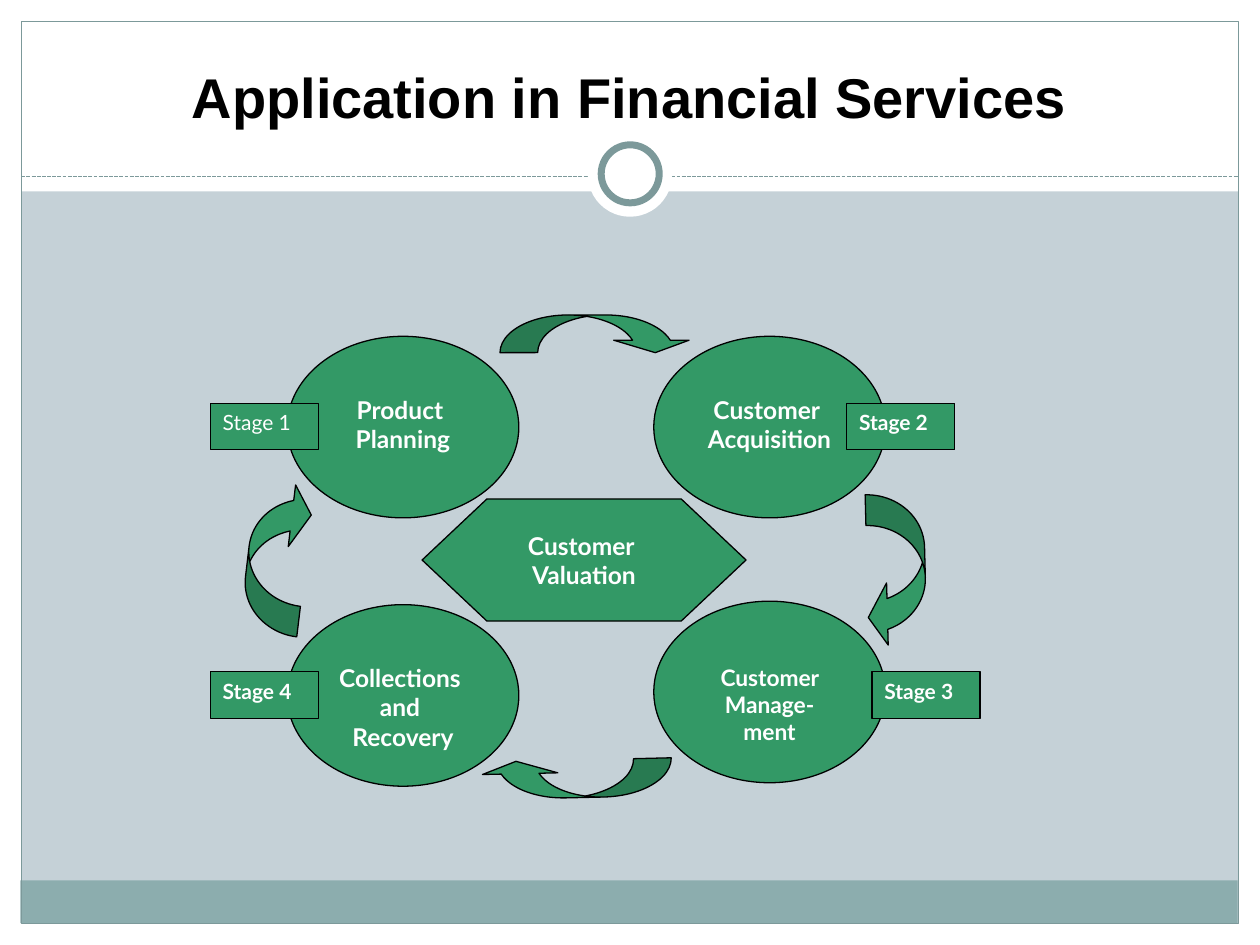
from pptx import Presentation
from pptx import util as u
from pptx.dml import color
from pptx.enum import dml, shapes, text
from pptx.oxml.ns import qn
from lxml import etree

KIND = shapes.MSO_SHAPE
WHITE, BLACK = "FFFFFF", "000000"
BACKDROP, TEAL, BAND, GREEN = "C5D1D7", "7C999A", "8CADAE", "339966"


def rgb(hex_code):
    return color.RGBColor.from_string(hex_code)


class Painter:
    """Holds the style and the current page."""

    body_font = "Lato"
    title_font = "Arial"
    thin = 0.75

    def __init__(self, page):
        self.page = page

    def shape(self, kind, at, fill=None, line=None, width=thin, turn=0, adjust=()):
        box = self.page.shapes.add_shape(kind, *(u.Cm(v) for v in at))
        box.shadow.inherit = False
        box.rotation = turn
        for index, value in enumerate(adjust):
            box.adjustments[index] = value
        if fill:
            box.fill.solid()
            box.fill.fore_color.rgb = rgb(fill)
        else:
            box.fill.background()
        if line:
            box.line.color.rgb = rgb(line)
            box.line.width = u.Pt(width)
        else:
            box.line.fill.background()
        return box

    def node(self, kind, at, **adjustment):
        return self.shape(kind, at, GREEN, BLACK, **adjustment)

    def rule(self, left, right, y):
        line = self.page.shapes.add_connector(
            shapes.MSO_CONNECTOR.STRAIGHT, u.Cm(left), u.Cm(y), u.Cm(right), u.Cm(y))
        line.line.color.rgb = rgb(TEAL)
        line.line.width = u.Pt(self.thin)
        line.line.dash_style = dml.MSO_LINE.SQUARE_DOT
        etree.SubElement(line._element.spPr, qn("a:effectLst"))

    def caption(self, box, lines, size, bold=True, align=text.PP_ALIGN.CENTER,
                top=0.13, font=body_font, ink=WHITE, anchor=text.MSO_ANCHOR.TOP):
        frame = box.text_frame
        frame.word_wrap = True
        frame.vertical_anchor = anchor
        frame.margin_top = u.Cm(top)
        for index, line in enumerate(lines):
            para = frame.add_paragraph() if index else frame.paragraphs[0]
            para.alignment = align
            span = para.add_run()
            span.text = line
            span.font.name = font
            span.font.size = u.Pt(size)
            span.font.bold = bold
            span.font.color.rgb = rgb(ink)

    def title(self, at, words):
        box = self.page.shapes.add_textbox(*(u.Cm(v) for v in at))
        self.caption(box, [words], 32, font=self.title_font, ink=BLACK,
                     anchor=text.MSO_ANCHOR.BOTTOM)


def main():
    deck = Presentation()
    deck.slide_width, deck.slide_height = u.Cm(25.4), u.Cm(19.05)
    page = deck.slides.add_slide(deck.slide_layouts[6])
    page.background.fill.solid()
    page.background.fill.fore_color.rgb = rgb(BACKDROP)
    painter = Painter(page)

    # White margins, footer band and frame
    for at in ((0, 18.62, 25.4, 0.43), (0, 0, 25.4, 3.86),
               (0, 0, 0.43, 19.05), (24.97, 0, 0.43, 19.05)):
        painter.shape(KIND.RECTANGLE, at, WHITE)
    painter.shape(KIND.RECTANGLE, (0.41, 17.75, 24.54, 0.86), BAND)
    painter.shape(KIND.RECTANGLE, (0.43, 0.43, 24.54, 18.19), line=TEAL)

    # Dashed rule with the ring
    painter.rule(0.43, 24.97, 3.56)
    painter.shape(KIND.OVAL, (11.85, 2.67, 1.7, 1.7), WHITE)
    painter.shape(KIND.OVAL, (12.12, 2.92, 1.17, 1.17), WHITE, TEAL, 4)

    painter.title((0.84, 0.64, 23.7, 2.11), "Application in Financial Services")

    # Four phases around the valuation
    left, right = 5.79, 13.18
    phases = (
        (left, 6.78, ["Product ", "Planning"], 14, 0.64),
        (right, 6.78, ["Customer ", "Acquisition"], 14, 0.64),
        (left, 12.19, ["Collections ", "and ", "Recovery"], 14, 0.64),
        (right, 12.12, ["Customer Manage-ment"], 13, 0.72),
    )
    for x, y, lines, size, top in phases:
        oval = painter.node(KIND.OVAL, (x, y, 4.67, 3.66))
        painter.caption(oval, lines, size, top=top)
    core = painter.node(KIND.FLOWCHART_PREPARATION, (8.51, 10.06, 6.53, 2.46))
    painter.caption(core, ["Customer ", "Valuation"], 14, top=0.64)

    # Stage labels
    upper, lower = 8.13, 13.54
    stages = ((4.24, upper, 1), (17.07, upper, 2), (4.24, lower, 4), (17.58, lower, 3))
    for x, y, number in stages:
        label = painter.node(KIND.RECTANGLE, (x, y, 2.18, 0.94))
        painter.caption(label, [f"Stage {number}"], 12, bold=number > 1,
                        align=text.PP_ALIGN.LEFT)

    # Curved arrows of the cycle
    for x, y, turn in ((5, 9.68, 186.8), (17.48, 9.96, 358.5)):
        painter.node(KIND.CURVED_LEFT_ARROW, (x, y, 1.17, 3.1),
                     turn=turn, adjust=(0.53, 1.07, 0.33))
    for x, y, turn in ((10.08, 6.35, 0), (9.65, 15.32, 178.7)):
        painter.node(KIND.CURVED_DOWN_ARROW, (x, y, 3.89, 0.76),
                     turn=turn, adjust=(1, 2, 0.33))

    deck.save("out.pptx")


if __name__ == "__main__":
    main()
